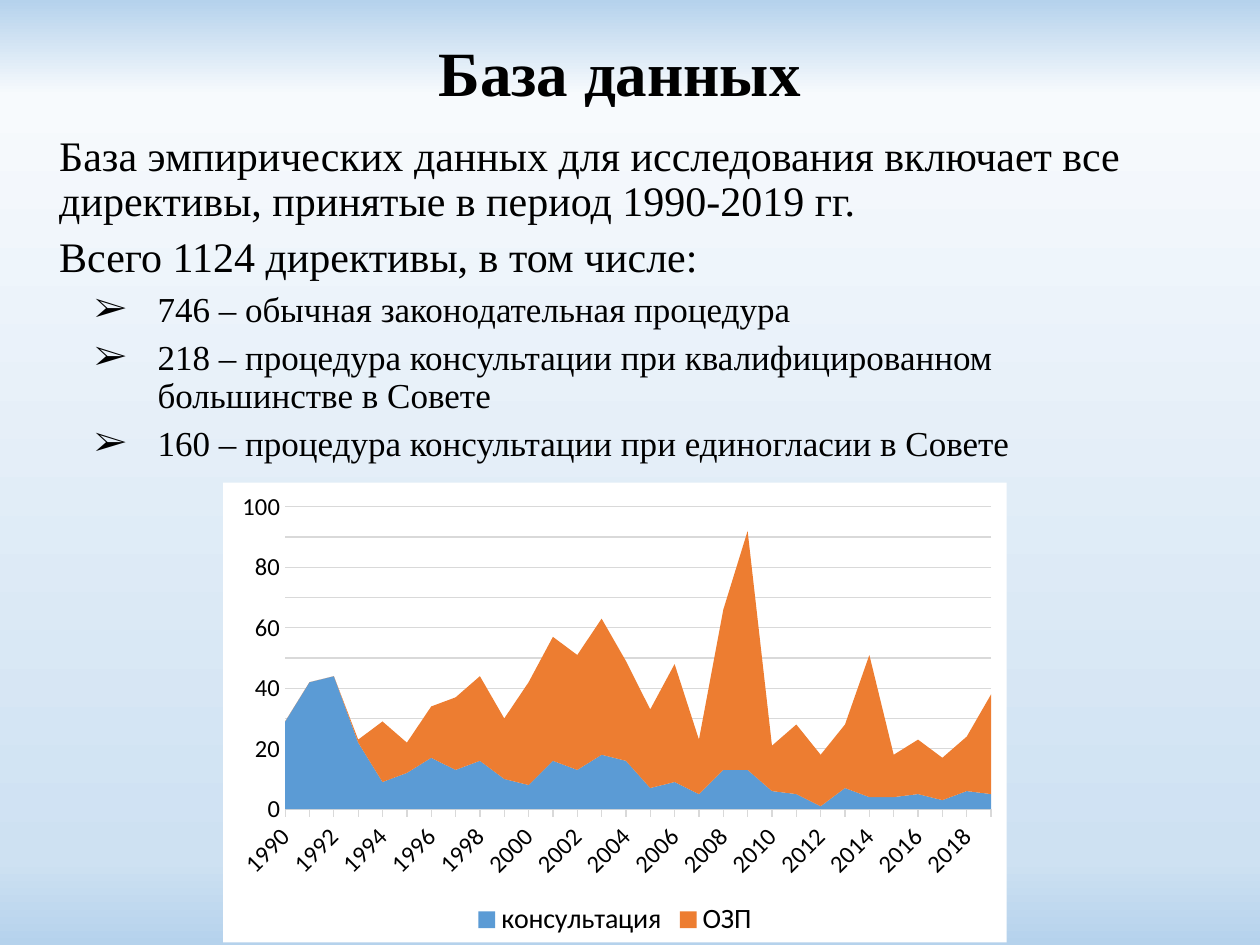
from lxml.etree import SubElement as add_node
from pptx import Presentation
from pptx.chart.data import CategoryChartData as ChartData
from pptx.dml.color import RGBColor as Rgb
from pptx.enum.chart import XL_CHART_TYPE as ChartType
from pptx.enum.chart import XL_LEGEND_POSITION as LegendPosition
from pptx.enum.chart import XL_TICK_MARK as TickMark
from pptx.enum.text import MSO_ANCHOR as Anchor
from pptx.enum.text import MSO_AUTO_SIZE as AutoSize
from pptx.enum.text import PP_ALIGN as Align
from pptx.oxml import parse_xml
from pptx.oxml.ns import nsdecls, qn
from pptx.util import Inches, Pt

WIDTH, HEIGHT = Inches(10), Inches(7.5)
COLORS = {
    "text": "000000", "grid": "D9D9D9", "panel": "FFFFFF",
    "консультация": "5B9BD5", "ОЗП": "ED7D31",
}
# Background stops: position in percent -> colour
SKY = {0: "B5D2EC", 10: "F7FAFD", 91: "CEE1F2", 100: "B5D2EC"}

INTRO = [
    "База эмпирических данных для исследования включает все директивы, "
    "принятые в период 1990-2019 гг.",
    "Всего 1124 директивы, в том числе:",
]
PROCEDURES = [
    "746 – обычная законодательная процедура",
    "218 – процедура консультации при квалифицированном большинстве в Совете",
    "160 – процедура консультации при единогласии в Совете",
]
YEARS = [str(year) for year in range(1990, 2020)]
DIRECTIVES = {
    "консультация": [29, 42, 44, 22, 9, 12, 17, 13, 16, 10, 8, 16, 13, 18, 16,
                     7, 9, 5, 13, 13, 6, 5, 1, 7, 4, 4, 5, 3, 6, 5],
    "ОЗП": [None, None, None, 1, 20, 10, 17, 24, 28, 20, 34, 41, 38, 45, 33,
            26, 39, 18, 53, 79, 15, 23, 17, 21, 47, 14, 18, 14, 18, 33],
}


def set_all(target, values):
    for key, value in values.items():
        setattr(target, key, value)


def set_font(font, size, name="Times New Roman", bold=False):
    set_all(font, {"size": Pt(size), "name": name, "bold": bold})
    font.color.rgb = Rgb.from_string(COLORS["text"])


def place(shape, left, top, width, height):
    set_all(shape, {"left": Inches(left), "top": Inches(top),
                    "width": Inches(width), "height": Inches(height)})


def paint_background(slide):
    fill = slide.background.fill
    fill.gradient()
    fill.gradient_angle = 270
    stops = slide.background._cSld.find(".//" + qn("a:gsLst"))
    for stop in list(stops):
        stops.remove(stop)
    for percent, color in SKY.items():
        stop = add_node(stops, qn("a:gs"), pos=str(percent * 1000))
        add_node(stop, qn("a:srgbClr"), val=color)


def add_title(slide):
    title = slide.shapes.title
    place(title, 0.67, 0.07, 8.62, 0.99)
    frame = title.text_frame
    set_all(frame, {"text": "База данных ", "vertical_anchor": Anchor.MIDDLE,
                    "auto_size": AutoSize.NONE})
    frame.paragraphs[0].alignment = Align.CENTER
    set_font(frame.paragraphs[0].runs[0].font, 36, bold=True)


def format_line(paragraph, size, margin=0.0, hanging=0.0, bullet=None):
    set_all(paragraph, {"line_spacing": 0.9, "space_before": Pt(6),
                        "alignment": Align.LEFT})
    set_font(paragraph.runs[0].font, size)
    properties = paragraph._p.get_or_add_pPr()
    properties.set("marL", str(Inches(margin)))
    properties.set("indent", str(-Inches(hanging)))
    if bullet:
        add_node(properties, qn("a:buFont"), typeface="Times New Roman")
        add_node(properties, qn("a:buChar"), char=bullet)
    else:
        add_node(properties, qn("a:buNone"))


def add_body(slide):
    body = slide.placeholders[1]
    place(body, 0.37, 0.73, 9.21, 3.1)
    frame = body.text_frame
    set_all(frame, {"text": "\n".join(INTRO + PROCEDURES), "word_wrap": True,
                    "auto_size": AutoSize.NONE, "margin_top": Inches(0.34),
                    "vertical_anchor": Anchor.TOP})
    for position, paragraph in enumerate(frame.paragraphs):
        if position < len(INTRO):
            format_line(paragraph, 24)
        else:
            format_line(paragraph, 20, 0.78, 0.5, "➢")


def format_axes(chart):
    years, counts = chart.category_axis, chart.value_axis
    set_all(years, {"major_tick_mark": TickMark.OUTSIDE,
                    "minor_tick_mark": TickMark.NONE,
                    "has_major_gridlines": False})
    set_all(counts, {"major_tick_mark": TickMark.NONE,
                     "minor_tick_mark": TickMark.NONE,
                     "has_major_gridlines": True, "minimum_scale": 0,
                     "maximum_scale": 100, "major_unit": 10})
    for axis in (years, counts):
        set_font(axis.tick_labels.font, 14, "Calibri")
    for line in (years.format.line, counts.major_gridlines.format.line):
        line.color.rgb = Rgb.from_string(COLORS["grid"])
        line.width = Pt(0.75)
    counts.format.line.fill.background()
    # Slanted years, areas starting on the value axis
    years._element.find(".//" + qn("a:bodyPr")).set("rot", "-2700000")
    counts._element.find(qn("c:crossBetween")).set("val", "midCat")


def add_directives_chart(slide):
    data = ChartData()
    data.categories = YEARS
    for name, values in DIRECTIVES.items():
        data.add_series(name, values)
    chart = slide.shapes.add_chart(
        ChartType.AREA_STACKED, Inches(1.77), Inches(3.83),
        Inches(6.22), Inches(3.65), data).chart
    set_all(chart, {"has_title": False, "has_legend": True})
    set_font(chart.font, 10, "Calibri")
    set_all(chart.legend, {"position": LegendPosition.BOTTOM,
                           "include_in_layout": False})
    set_font(chart.legend.font, 16, "Calibri")
    format_axes(chart)
    chart.plots[0].vary_by_categories = False
    for series in chart.plots[0].series:
        series.format.fill.solid()
        series.format.fill.fore_color.rgb = Rgb.from_string(COLORS[series.name])
    # White panel without a border
    panel = parse_xml(
        f'<c:spPr {nsdecls("c", "a")}><a:solidFill><a:srgbClr '
        f'val="{COLORS["panel"]}"/></a:solidFill>'
        '<a:ln><a:noFill/></a:ln></c:spPr>')
    chart._chartSpace.find(qn("c:chart")).addnext(panel)


def main():
    deck = Presentation()
    set_all(deck, {"slide_width": WIDTH, "slide_height": HEIGHT})
    slide = deck.slides.add_slide(deck.slide_layouts[1])
    paint_background(slide)
    add_title(slide)
    add_body(slide)
    add_directives_chart(slide)
    deck.save("out.pptx")


if __name__ == "__main__":
    main()
